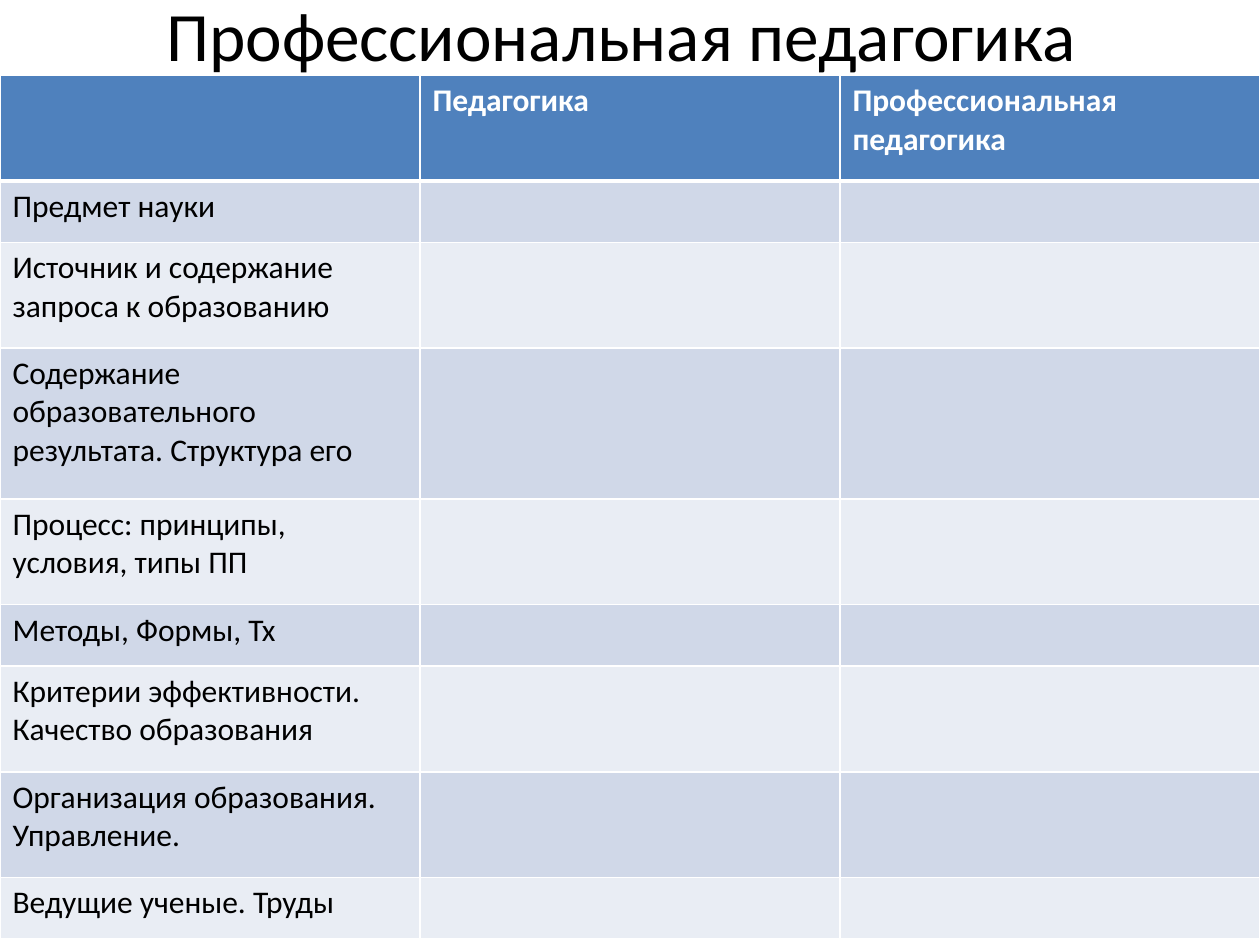
from lxml import etree
from pptx import Presentation
from pptx.dml.color import RGBColor
from pptx.enum.text import MSO_ANCHOR, MSO_AUTO_SIZE, PP_ALIGN
from pptx.oxml.ns import qn
from pptx.util import Cm, Pt

MIDDLE = MSO_ANCHOR.MIDDLE
NO_AUTOFIT = MSO_AUTO_SIZE.NONE
CENTER = PP_ALIGN.CENTER
TITLE_ONLY_LAYOUT = 5

COLORS = {
    "text": "000000",
    "white": "FFFFFF",
    "header": "4F81BD",
    "band_dark": "D0D8E8",
    "band_light": "E9EDF4",
}

TITLE = "Профессиональная педагогика"
HEADERS = ["", "Педагогика", "Профессиональная педагогика"]
# Topic of each row and its height in centimetres
TOPICS = [
    ("Предмет науки", 1.24),
    ("Источник и содержание запроса к образованию", 2.13),
    ("Содержание  образовательного результата. Структура его", 3.04),
    ("Процесс: принципы, условия, типы ПП", 2.13),
    ("Методы, Формы, Тх", 1.24),
    ("Критерии эффективности. Качество образования", 2.13),
    ("Организация образования. Управление.", 2.13),
    ("Ведущие ученые. Труды", 1.24),
]
HEADER_HEIGHT = 2.13
THIN, THICK = 1, 3

TITLE_FONT = {"name": "Calibri", "size": Pt(39.6), "bold": False}
HEADER_FONT = {"name": "Calibri", "size": Pt(18), "bold": True}
BODY_FONT = {"name": "Calibri", "size": Pt(18), "bold": False}


def apply_format(target, values):
    for name, value in values.items():
        setattr(target, name, value)


def write_text(text_frame, text, font, color):
    paragraph = text_frame.paragraphs[0]
    run = paragraph.add_run()
    run.text = text
    apply_format(run.font, font)
    run.font.color.rgb = RGBColor.from_string(COLORS[color])
    return paragraph


def add_title(slide):
    title = slide.shapes.title
    apply_format(title, {"left": Cm(1.09), "top": Cm(0),
                         "width": Cm(22.86), "height": Cm(1.37)})
    apply_format(title.text_frame, {"auto_size": NO_AUTOFIT, "word_wrap": True,
                                    "vertical_anchor": MIDDLE})
    write_text(title.text_frame, TITLE, TITLE_FONT, "text").alignment = CENTER


def set_borders(cell, top, bottom):
    properties = cell._tc.get_or_add_tcPr()
    widths = {"lnL": THIN, "lnR": THIN, "lnT": top, "lnB": bottom}
    for side, width in widths.items():
        line = etree.SubElement(properties, qn(f"a:{side}"), w=str(Pt(width)))
        fill = etree.SubElement(line, qn("a:solidFill"))
        etree.SubElement(fill, qn("a:srgbClr"), val=COLORS["white"])


def format_cell(cell, row_index):
    # The line under the header is thicker than the others
    set_borders(cell, THICK if row_index == 1 else THIN,
                THICK if row_index == 0 else THIN)
    if row_index == 0:
        fill = "header"
    else:
        fill = "band_dark" if row_index % 2 else "band_light"
    cell.fill.solid()
    cell.fill.fore_color.rgb = RGBColor.from_string(COLORS[fill])


def add_comparison_table(slide):
    heights = [HEADER_HEIGHT] + [height for _, height in TOPICS]
    rows = [HEADERS] + [[topic, "", ""] for topic, _ in TOPICS]
    table = slide.shapes.add_table(
        len(rows), len(HEADERS), Cm(0), Cm(1.52), Cm(25.4), Cm(sum(heights))
    ).table
    for row_index, (texts, height) in enumerate(zip(rows, heights)):
        table.rows[row_index].height = Cm(height)
        font, color = (BODY_FONT, "text") if row_index else (HEADER_FONT, "white")
        for column_index, text in enumerate(texts):
            cell = table.cell(row_index, column_index)
            format_cell(cell, row_index)
            if text:
                write_text(cell.text_frame, text, font, color)


def main():
    presentation = Presentation()
    presentation.slide_width = Cm(25.4)
    presentation.slide_height = Cm(19.05)
    layout = presentation.slide_layouts[TITLE_ONLY_LAYOUT]
    slide = presentation.slides.add_slide(layout)
    add_title(slide)
    add_comparison_table(slide)
    presentation.save("out.pptx")


if __name__ == "__main__":
    main()
